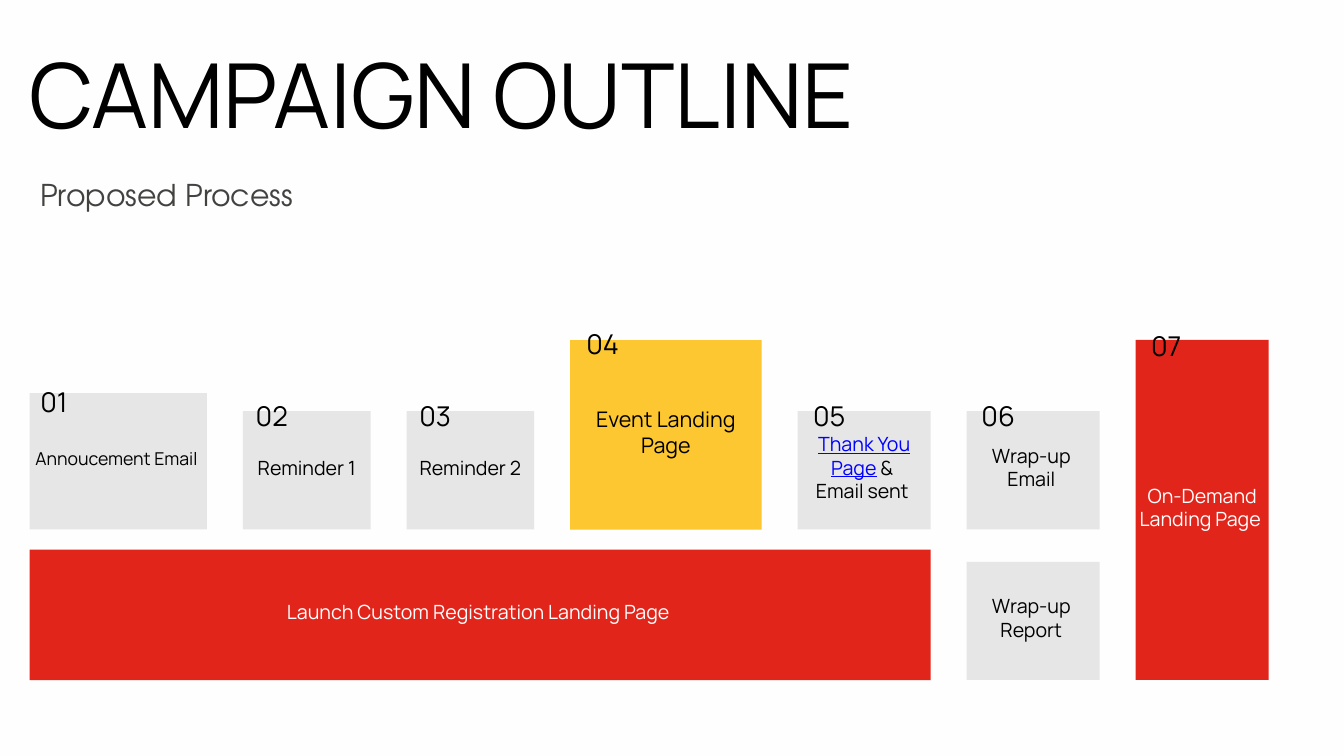
from collections import namedtuple
from dataclasses import dataclass

from pptx import Presentation
from pptx.dml.color import RGBColor
from pptx.enum.shapes import MSO_SHAPE
from pptx.enum.text import MSO_ANCHOR, MSO_AUTO_SIZE, PP_ALIGN
from pptx.util import Inches, Pt


@dataclass(frozen=True)
class Theme:
    """Colours, fonts and type sizes of the slide."""
    paper: str = "FEFEFE"
    ink: str = "000000"
    soft_ink: str = "424240"
    link: str = "0000FF"
    white: str = "FFFFFF"
    grey: str = "E6E6E6"
    yellow: str = "FCC730"
    red: str = "E1251B"
    font: str = "Manrope"
    subtitle_font: str = "TeX Gyre Adventor"
    title: float = 96
    subtitle: float = 32.1
    number: float = 29.2
    feature: float = 23
    label: float = 21
    small: float = 19


THEME = Theme()
Box = namedtuple("Box", "left top width height")
Stage = namedtuple("Stage", "number label width top bottom fill ink size indent rise")

LEFT, RIGHT = 0.44, 18.88
TALL_TOP, FIRST_TOP, CARD_TOP = 5.06, 5.85, 6.12
FLOW_BOTTOM, BOTTOM = 7.88, 10.12
LAUNCH_TOP, REPORT_TOP = 8.18, 8.36
LINK_TEXT = "Thank You Page"

STAGES = [
    Stage("01", "Annoucement Email ", 2.64, FIRST_TOP, FLOW_BOTTOM,
          THEME.grey, THEME.ink, THEME.small, 0.16, 0.30),
    Stage("02", "Reminder 1", 1.9, CARD_TOP, FLOW_BOTTOM,
          THEME.grey, THEME.ink, THEME.label, 0.19, 0.37),
    Stage("03", "Reminder 2", 1.9, CARD_TOP, FLOW_BOTTOM,
          THEME.grey, THEME.ink, THEME.label, 0.19, 0.37),
    Stage("04", "Event Landing Page", 2.85, TALL_TOP, FLOW_BOTTOM,
          THEME.yellow, THEME.ink, THEME.feature, 0.24, 0.37),
    Stage("05", "Thank You Page & \nEmail sent ", 1.98, CARD_TOP, FLOW_BOTTOM,
          THEME.grey, THEME.ink, THEME.label, 0.23, 0.36),
    Stage("06", "Wrap-up \nEmail ", 1.98, CARD_TOP, FLOW_BOTTOM,
          THEME.grey, THEME.ink, THEME.label, 0.22, 0.36),
    Stage("07", "On-Demand Landing Page ", 1.98, TALL_TOP, BOTTOM,
          THEME.red, THEME.white, THEME.label, 0.23, 0.35),
]


def inches(box):
    """Return the box as slide lengths."""
    return [Inches(length) for length in box]


def style_run(run, size, color, font=THEME.font):
    """Set the type of one run."""
    run.font.name = font
    run.font.size = Pt(size)
    run.font.color.rgb = RGBColor.from_string(color)


def style_frame(frame, size, color, leading, align, font=THEME.font):
    """Set wrapping, line spacing and type of a whole text frame."""
    frame.word_wrap = True
    frame.auto_size = MSO_AUTO_SIZE.NONE
    for paragraph in frame.paragraphs:
        paragraph.alignment = align
        paragraph.line_spacing = Pt(leading)
        for run in paragraph.runs:
            style_run(run, size, color, font)


def set_insets(frame, inset, bottom):
    """Give a frame equal insets with its own bottom one."""
    frame.margin_left = frame.margin_right = frame.margin_top = Inches(inset)
    frame.margin_bottom = Inches(bottom)


def add_line(slide, box, text, size, color, leading, font=THEME.font):
    """Place one left-aligned line of text."""
    frame = slide.shapes.add_textbox(*inches(box)).text_frame
    frame.text = text
    set_insets(frame, 0, 0)
    style_frame(frame, size, color, leading, PP_ALIGN.LEFT, font)


def add_header(slide, box):
    """Place the title and the subtitle below it."""
    title = slide.shapes.title
    title.left, title.top, title.width, title.height = inches(box._replace(height=1.59))
    frame = title.text_frame
    frame.text = "CAMPAIGN OUTLINE"
    frame.vertical_anchor = MSO_ANCHOR.TOP
    set_insets(frame, 0, 0)
    style_frame(frame, THEME.title, THEME.ink, THEME.title * 1.1, PP_ALIGN.LEFT)
    subtitle = Box(box.left + 0.16, box.top + 1.9, 4.34, 0.62)
    add_line(slide, subtitle, "Proposed Process", THEME.subtitle,
             THEME.soft_ink, 40.1, THEME.subtitle_font)


def add_card(slide, box, label, fill, ink, size):
    """Place a filled card with its centred label and return the label's frame."""
    card = slide.shapes.add_shape(MSO_SHAPE.RECTANGLE, *inches(box))
    card.shadow.inherit = False
    card.fill.solid()
    card.fill.fore_color.rgb = RGBColor.from_string(fill)
    card.line.fill.background()
    frame = card.text_frame
    frame.text = label
    frame.vertical_anchor = MSO_ANCHOR.MIDDLE
    set_insets(frame, 0.01, 0.1)
    style_frame(frame, size, ink, size * 1.2, PP_ALIGN.CENTER)
    return frame


def mark_link(paragraph, size):
    """Split the linked words from the rest and underline them."""
    rest = paragraph.text.removeprefix(LINK_TEXT)
    paragraph.text = LINK_TEXT
    linked = paragraph.runs[0]
    style_run(linked, size, THEME.link)
    linked.font.underline = True
    tail = paragraph.add_run()
    tail.text = rest
    style_run(tail, size, THEME.ink)


def add_stage(slide, box, stage):
    """Place a numbered stage of the campaign."""
    frame = add_card(slide, box, stage.label, stage.fill, stage.ink, stage.size)
    if stage.label.startswith(LINK_TEXT):
        mark_link(frame.paragraphs[0], stage.size)
    number = Box(box.left + stage.indent, box.top - stage.rise, 0.76, 0.65)
    add_line(slide, number, stage.number, THEME.number, THEME.ink, 48.5)


def add_process(slide, left, right):
    """Place the stages at equal gaps, with the launch bar and report below."""
    gap = (right - left - sum(stage.width for stage in STAGES)) / (len(STAGES) - 1)
    columns = {}
    x = left
    for stage in STAGES:
        box = Box(x, stage.top, stage.width, stage.bottom - stage.top)
        add_stage(slide, box, stage)
        columns[stage.number] = box
        x += stage.width + gap
    launch_end = columns["05"].left + columns["05"].width
    add_card(slide, Box(left, LAUNCH_TOP, launch_end - left, BOTTOM - LAUNCH_TOP),
             "Launch Custom Registration Landing Page ",
             THEME.red, THEME.white, THEME.label)
    report = columns["06"]._replace(top=REPORT_TOP, height=BOTTOM - REPORT_TOP)
    add_card(slide, report, "Wrap-up \nReport ", THEME.grey, THEME.ink, THEME.label)


def main():
    """Build the campaign outline slide."""
    deck = Presentation()
    deck.slide_width, deck.slide_height = Inches(20), Inches(11.25)
    slide = deck.slides.add_slide(deck.slide_layouts.get_by_name("Title Only"))
    slide.background.fill.solid()
    slide.background.fill.fore_color.rgb = RGBColor.from_string(THEME.paper)
    add_header(slide, Box(LEFT, 0.71, 12.88, 2.52))
    add_process(slide, LEFT, RIGHT)
    deck.save("out.pptx")


if __name__ == "__main__":
    main()
